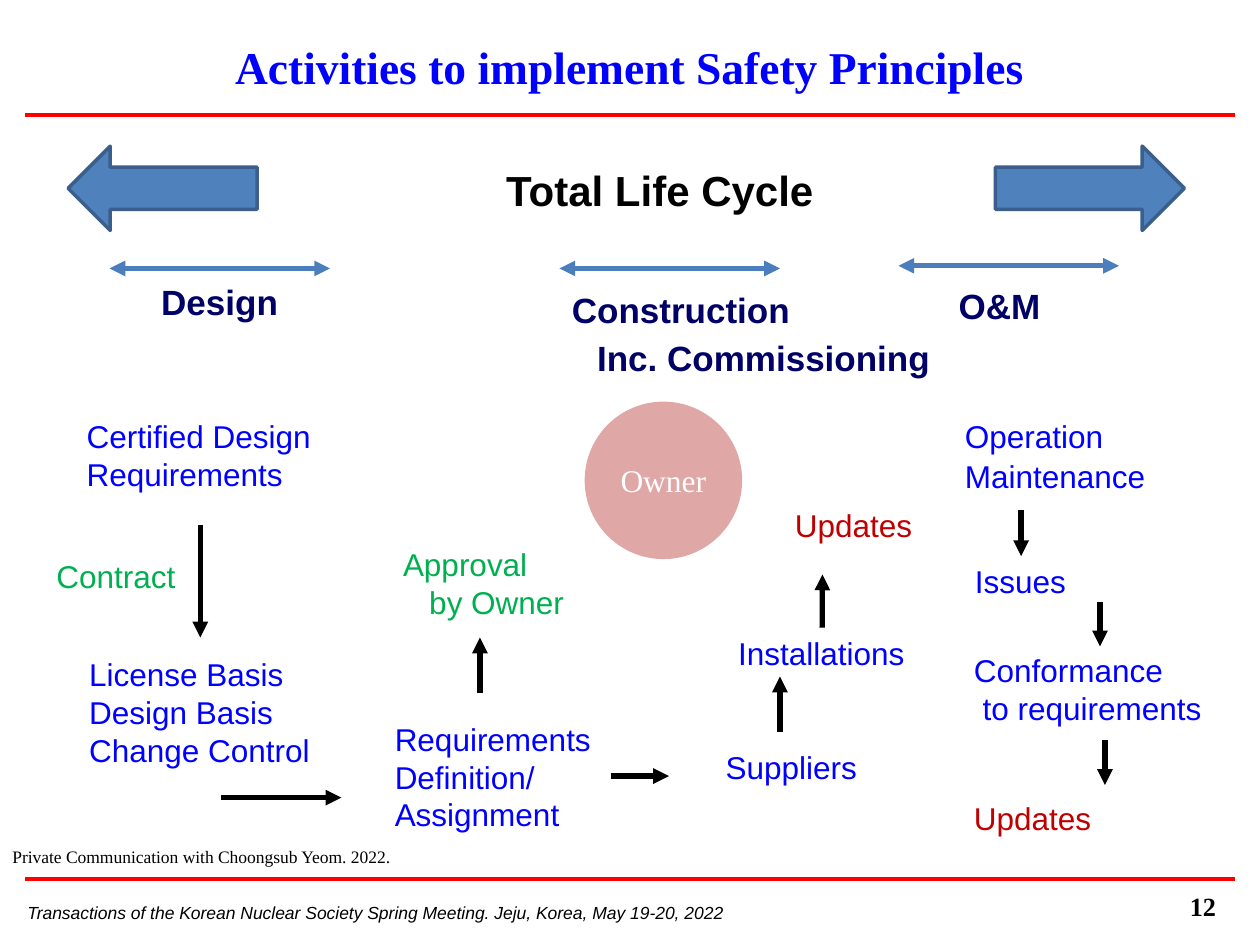
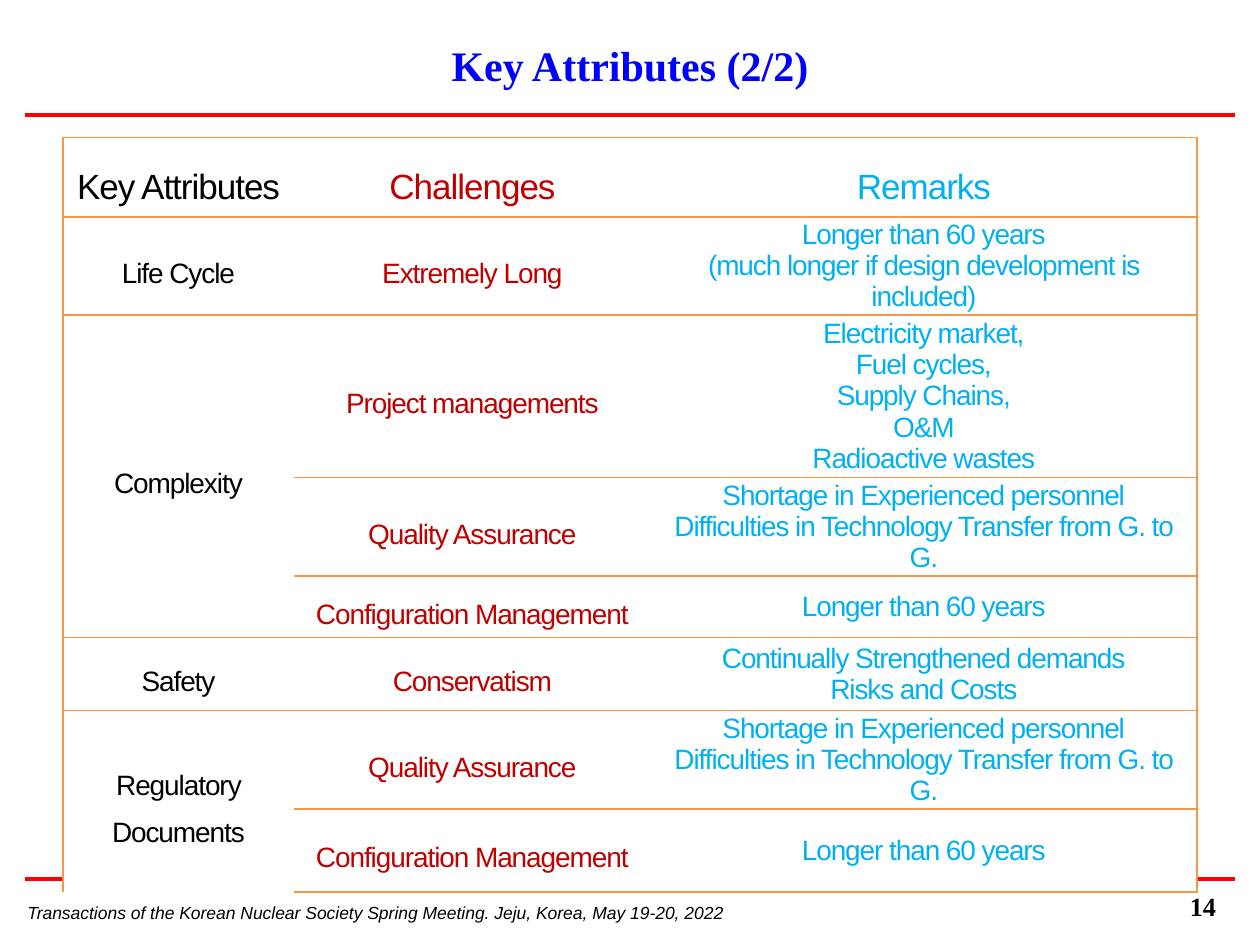
from lxml import etree
from pptx import Presentation
from pptx.dml.color import RGBColor
from pptx.enum.shapes import MSO_CONNECTOR, MSO_SHAPE
from pptx.enum.text import MSO_ANCHOR, MSO_AUTO_SIZE, PP_ALIGN
from pptx.oxml.ns import qn
from pptx.util import Pt

RED = RGBColor(0xFF, 0x00, 0x00)
BLUE = RGBColor(0x00, 0x00, 0xFF)
NAVY = RGBColor(0x00, 0x00, 0x66)
GREEN = RGBColor(0x00, 0xB0, 0x50)
CRIMSON = RGBColor(0xC0, 0x00, 0x00)
SKY = RGBColor(0x00, 0xB0, 0xF0)
STEEL = RGBColor(0x4F, 0x81, 0xBD)
STEEL_EDGE = RGBColor(0x3A, 0x5F, 0x8C)
SPAN_BLUE = RGBColor(0x4B, 0x7E, 0xBC)
ROSE = RGBColor(0xC0, 0x50, 0x4D)
ORANGE = RGBColor(0xF7, 0x96, 0x46)
BLACK = RGBColor(0x00, 0x00, 0x00)
WHITE = RGBColor(0xFF, 0xFF, 0xFF)
SANS, SERIF = "Arial", "Times New Roman"


def add_text(s, lines, x, y, w, h, size, color, name=SANS, wrap=False, indent=0):
    sp = s.shapes.add_textbox(Pt(x), Pt(y), Pt(w), Pt(h))
    tf = sp.text_frame
    tf.word_wrap = wrap
    tf.auto_size = MSO_AUTO_SIZE.NONE if wrap else MSO_AUTO_SIZE.SHAPE_TO_FIT_TEXT
    tf.text = lines
    for p in tf.paragraphs:
        p.font.size, p.font.name, p.font.color.rgb = Pt(size), name, color
    if indent:
        tf.paragraphs[-1]._p.get_or_add_pPr().set("marL", str(Pt(indent)))
    return sp


def add_line(s, x1, y1, x2, y2, color, width, ends=()):
    line = s.shapes.add_connector(MSO_CONNECTOR.STRAIGHT, Pt(x1), Pt(y1), Pt(x2), Pt(y2))
    line.line.color.rgb, line.line.width = color, Pt(width)
    for end in ends:
        etree.SubElement(line.line._get_or_add_ln(), qn(f"a:{end}"), type="triangle")
    etree.SubElement(line._element.spPr, qn("a:effectLst"))
    return line


prs = Presentation()
prs.slide_width, prs.slide_height = Pt(720), Pt(540)

slides = []
for title, number, size, top, height in [
    ("Activities to implement Safety Principles", "12", 26, 15, 45.5),
    ("Key Attributes (2/2)", "14", 24, 18, 38),
]:
    s = prs.slides.add_slide(prs.slide_layouts[5])
    slides.append(s)
    for y in (65.75, 502.5):
        add_line(s, 14.4, y, 705.6, y, RED, 2.25)
    sp = add_text(s, "Transactions of the Korean Nuclear Society Spring Meeting. "
                  "Jeju, Korea, May 19-20, 2022", 8.6, 512, 663, 19.4, 10, BLACK, wrap=True)
    sp.text_frame.paragraphs[0].font.italic = True
    sp = add_text(s, number, 534.3, 505.4, 167.7, 19.4, 15, BLACK, SERIF, wrap=True)
    p = sp.text_frame.paragraphs[0]
    p.font.bold, p.alignment = True, PP_ALIGN.RIGHT

    sp = s.shapes.title
    sp.left, sp.top, sp.width, sp.height = Pt(0), Pt(top), Pt(720), Pt(height)
    tf = sp.text_frame
    tf.text = title
    tf.auto_size, tf.vertical_anchor = MSO_AUTO_SIZE.NONE, MSO_ANCHOR.MIDDLE
    p = tf.paragraphs[0]
    p.alignment = PP_ALIGN.CENTER
    p.font.size, p.font.name, p.font.bold = Pt(size), SERIF, True
    p.font.color.rgb = BLUE

s, table_slide = slides

for x, rotation in [(568.8, 0), (38.9, 180)]:
    sp = s.shapes.add_shape(MSO_SHAPE.RIGHT_ARROW, Pt(x), Pt(83.5), Pt(108), Pt(48.2))
    sp.rotation = rotation
    sp.shadow.inherit = False
    sp.fill.solid()
    sp.fill.fore_color.rgb = STEEL
    sp.line.color.rgb, sp.line.width = STEEL_EDGE, Pt(2)

for text, x, y, w, h, size, color in [
    ("Total Life Cycle", 282.2, 90.7, 191.5, 36, 24, BLACK),
    ("Design", 85, 157, 82, 31.7, 20, NAVY),
    ("Construction", 319.7, 161.3, 140.4, 31.7, 20, NAVY),
    ("Inc. Commissioning", 334.1, 188.6, 206, 31.7, 20, NAVY),
    ("O&M", 540.7, 159.1, 62, 31.7, 20, NAVY),
]:
    sp = add_text(s, text, x, y, w, h, size, color)
    sp.text_frame.paragraphs[0].font.bold = True

for x, y in [(62.6, 153.4), (319.7, 153.4), (513.4, 151.9)]:
    add_line(s, x, y, x + 126, y, SPAN_BLUE, 3, ("headEnd", "tailEnd"))

sp = s.shapes.add_shape(MSO_SHAPE.OVAL, Pt(334.1), Pt(229.5), Pt(90), Pt(90))
sp.shadow.inherit = False
sp.fill.solid()
sp.fill.fore_color.rgb = ROSE
color = sp.fill._xPr.find(qn("a:solidFill"))[0]
etree.SubElement(color, qn("a:alpha"), val="50000")
sp.line.fill.background()
tf = sp.text_frame
tf.text, tf.vertical_anchor = "Owner", MSO_ANCHOR.MIDDLE
p = tf.paragraphs[0]
p.alignment = PP_ALIGN.CENTER
p.font.size, p.font.name, p.font.color.rgb = Pt(18), SERIF, WHITE

steps = {}
for text, x, y, w, color, indent in [
    ("Certified Design\nRequirements", 42.5, 234.7, 144, BLUE, 0),
    ("Contract", 25.2, 314.6, 83.5, GREEN, 0),
    ("License Basis\nDesign Basis\nChange Control", 43.9, 370.8, 141.8, BLUE, 0),
    ("Approval\nby Owner", 223.2, 307.8, 107.3, GREEN, 15),
    ("Requirements\nDefinition/\nAssignment", 218.5, 407.8, 147.6, BLUE, 0),
    ("Suppliers", 407.5, 424.1, 90, BLUE, 0),
    ("Installations", 414.7, 358.6, 110.2, BLUE, 0),
    ("Updates", 447.1, 285.8, 82.1, CRIMSON, 0),
    ("Operation", 544.3, 234.7, 94.3, BLUE, 0),
    ("Maintenance", 544.3, 257.8, 118.8, BLUE, 0),
    ("Issues", 550, 317.8, 67, BLUE, 0),
    ("Conformance\nto requirements", 549.4, 368.6, 146.2, BLUE, 5),
    ("Updates", 549.4, 452.9, 82.1, CRIMSON, 0),
]:
    h = 7.2 + 21.6 * len(text.split("\n"))
    steps[text] = add_text(s, text, x, y, w, h, 18, color, indent=indent)

for x1, y1, x2, y2 in [
    (114.5, 300.2, 114.5, 364.3),
    (126, 455.8, 195.1, 455.8),
    (274.3, 396, 274.3, 364.3),
    (349.2, 443.5, 382.3, 443.5),
    (445.7, 418.3, 445.7, 386.6),
    (628.6, 344.2, 628.6, 369.4),
    (631.4, 422.6, 631.4, 448.6),
]:
    add_line(s, x1, y1, x2, y2, BLACK, 3, ("tailEnd",))
line = add_line(s, 470, 358.6, 470, 328.3, BLACK, 3, ("tailEnd",))
line.begin_connect(steps["Installations"], 0)
line = add_line(s, 583.5, 291.6, 583.5, 317.8, BLACK, 3, ("tailEnd",))
line.end_connect(steps["Issues"], 0)

add_text(s, "Private Communication with Choongsub Yeom. 2022.",
         0, 480.2, 720, 23.8, 10, BLACK, SERIF, wrap=True)

SHORTAGE = ("Shortage in Experienced personnel\n"
            "Difficulties in Technology Transfer from G. to G.")
rows = [
    (45.4, "Key Attributes", "Challenges", "Remarks"),
    (47.5, "Life Cycle", "Extremely Long",
     "Longer than 60 years\n(much longer if design development is included)"),
    (92.9, "Complexity", "Project managements",
     "Electricity market,\nFuel cycles,\nSupply Chains,\nO&M\nRadioactive wastes"),
    (49, "", "Quality Assurance", SHORTAGE),
    (35.3, "", "Configuration Management", "Longer than 60 years"),
    (41.8, "Safety", "Conservatism", "Continually Strengthened demands\nRisks and Costs"),
    (49, "Regulatory Documents", "Quality Assurance", SHORTAGE),
    (47.5, "", "Configuration Management", "Longer than 60 years"),
]
table = table_slide.shapes.add_table(
    len(rows), 3, Pt(36), Pt(78.5), Pt(648), Pt(sum(row[0] for row in rows))).table
for column, width in zip(table.columns, (132, 204, 312)):
    column.width = Pt(width)
table.cell(2, 0).merge(table.cell(4, 0))
table.cell(6, 0).merge(table.cell(7, 0))

for i, (height, *texts) in enumerate(rows):
    table.rows[i].height = Pt(height)
    for j, (text, color) in enumerate(zip(texts, (BLACK, CRIMSON, SKY))):
        cell = table.cell(i, j)
        cell.fill.solid()
        cell.fill.fore_color.rgb = WHITE
        cell.vertical_anchor = MSO_ANCHOR.MIDDLE
        cell.margin_left = cell.margin_right = Pt(5)
        cell.margin_top = cell.margin_bottom = Pt(1.4)
        if not cell.is_spanned:
            cell.text = text
            for p in cell.text_frame.paragraphs:
                p.alignment = PP_ALIGN.CENTER
                p.line_spacing = 1.5 if i == 0 or j < 2 else 1.0
                p.font.size, p.font.name = Pt(20 if i == 0 else 16), SANS
                p.font.bold, p.font.color.rgb = False, color
                for r in p.runs:
                    r._r.get_or_add_rPr().set("spc", "-60")
        edges = {"L": j == 0, "R": j == 2, "T": not cell.is_spanned,
                 "B": j > 0 or i == len(rows) - 1 or not table.cell(i + 1, 0).is_spanned}
        for k, (side, shown) in enumerate(edges.items()):
            ln = etree.Element(qn(f"a:ln{side}"), w=str(Pt(1)))
            fill = etree.SubElement(ln, qn("a:solidFill" if shown else "a:noFill"))
            if shown:
                etree.SubElement(fill, qn("a:srgbClr"), val=str(ORANGE))
            cell._tc.get_or_add_tcPr().insert(k, ln)

prs.save("out.pptx")
